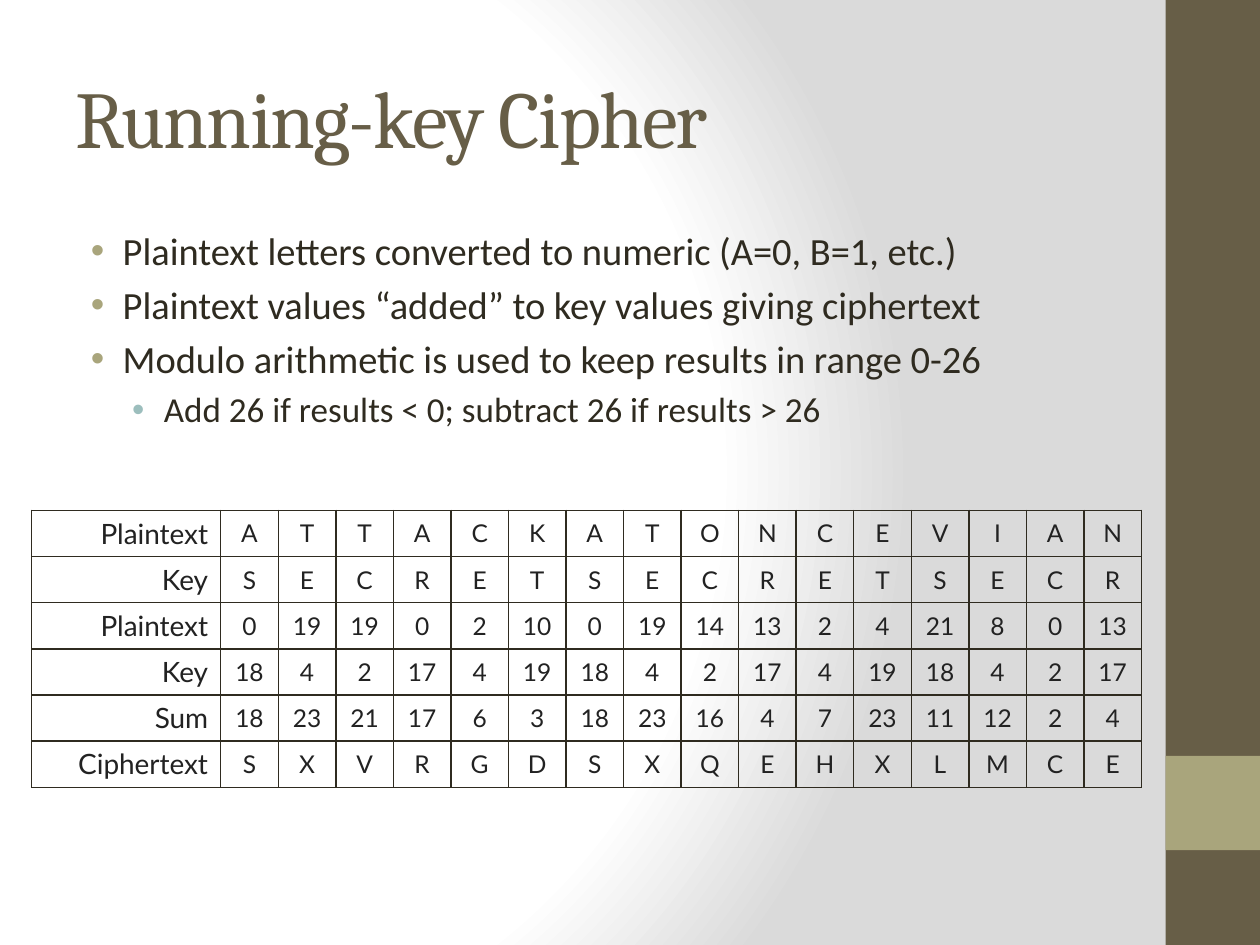
"""Build the Running-key Cipher slide with its worked encryption table."""
from lxml.etree import SubElement
from pptx import Presentation
from pptx.dml.color import RGBColor
from pptx.enum.shapes import MSO_SHAPE
from pptx.enum.text import MSO_ANCHOR, MSO_AUTO_SIZE, PP_ALIGN
from pptx.oxml import parse_xml
from pptx.oxml.ns import nsdecls, qn
from pptx.util import Cm, Pt

COLORS = {
    "brown": "675E47", "olive": "A9A57C", "teal": "9CBEBD", "ink": "2F2B20",
    "cell": "222222", "white": "FFFFFF", "gray": "DADADA",
}


def format_font(font, color, **values):
    font.color.rgb = RGBColor.from_string(COLORS[color])
    for name, value in values.items():
        setattr(font, name, value)


def set_indent(paragraph, left, hanging):
    properties = paragraph._p.get_or_add_pPr()
    properties.set("marL", str(Cm(left)))
    properties.set("indent", str(-Cm(hanging)))
    return properties


presentation = Presentation()
presentation.slide_width, presentation.slide_height = Cm(25.4), Cm(19.05)
slide = presentation.slides.add_slide(presentation.slide_layouts[1])

slide._element.cSld.insert(0, parse_xml(
    f'<p:bg {nsdecls("p", "a")}><p:bgPr><a:gradFill rotWithShape="1"><a:gsLst>'
    f'<a:gs pos="0"><a:srgbClr val="{COLORS["white"]}"/></a:gs>'
    f'<a:gs pos="75000"><a:srgbClr val="{COLORS["white"]}"/></a:gs>'
    f'<a:gs pos="100000"><a:srgbClr val="{COLORS["gray"]}"/></a:gs></a:gsLst>'
    '<a:path path="circle"><a:fillToRect l="20000" t="50000" r="100000" b="50000"/></a:path>'
    '</a:gradFill><a:effectLst/></p:bgPr></p:bg>'))

for color, top, height in (("brown", 0, 19.05), ("olive", 15.24, 1.9)):
    band = slide.shapes.add_shape(MSO_SHAPE.RECTANGLE, Cm(23.5), Cm(top), Cm(1.9), Cm(height))
    band.shadow.inherit = False
    band.fill.solid()
    band.fill.fore_color.rgb = RGBColor.from_string(COLORS[color])
    band.line.fill.background()

title, body = slide.shapes.title, slide.placeholders[1]
for placeholder, top, height, anchor in (
    (title, 0.76, 3.18, MSO_ANCHOR.MIDDLE),
    (body, 4.45, 4.88, MSO_ANCHOR.TOP),
):
    placeholder.left, placeholder.top = Cm(1.27), Cm(top)
    placeholder.width, placeholder.height = Cm(21.16), Cm(height)
    placeholder.text_frame.auto_size = MSO_AUTO_SIZE.NONE
    placeholder.text_frame.vertical_anchor = anchor

title.text_frame.text = "Running-key Cipher"
heading = title.text_frame.paragraphs[0]
heading.alignment = PP_ALIGN.LEFT
format_font(heading.runs[0].font, "brown", name="Cambria", size=Pt(46))
heading.runs[0].font._element.set("spc", "-100")

bullets = [
    ("Plaintext letters converted to numeric (A=0, B=1, etc.)", 0),
    ("Plaintext values “added” to key values giving ciphertext", 0),
    ("Modulo arithmetic is used to keep results in range 0-26", 0),
    ("Add 26 if results < 0; subtract 26 if results > 26", 1),
]
levels = [
    {"left": 0.95, "size": Pt(22), "bullet": "olive"},
    {"left": 1.78, "size": Pt(20), "bullet": "teal"},
]
body.text_frame.text = "\n".join(text for text, level in bullets)
for paragraph, (text, level) in zip(body.text_frame.paragraphs, bullets):
    style = levels[level]
    paragraph.level = level
    properties = set_indent(paragraph, style["left"], 0.64)
    bullet_color = SubElement(properties, qn("a:buClr"))
    SubElement(bullet_color, qn("a:srgbClr"), val=COLORS[style["bullet"]])
    SubElement(properties, qn("a:buFont"), typeface="Arial")
    SubElement(properties, qn("a:buChar"), char="•")
    format_font(paragraph.runs[0].font, "ink", name="Calibri", size=style["size"])

cipher_rows = [
    "Plaintext A T T A C K A T O N C E V I A N",
    "Key S E C R E T S E C R E T S E C R",
    "Plaintext 0 19 19 0 2 10 0 19 14 13 2 4 21 8 0 13",
    "Key 18 4 2 17 4 19 18 4 2 17 4 19 18 4 2 17",
    "Sum 18 23 21 17 6 3 18 23 16 4 7 23 11 12 2 4",
    "Ciphertext S X V R G D S X Q E H X L M C E",
]
label_width, letter_width, row_height, letters = 3.81, 1.16, 0.93, 16
table = slide.shapes.add_table(
    len(cipher_rows), letters + 1, Cm(0.64), Cm(10.29),
    Cm(label_width + letters * letter_width), Cm(row_height * len(cipher_rows))).table
table.first_row = table.horz_banding = False
for index, column in enumerate(table.columns):
    column.width = Cm(letter_width if index else label_width)

for row, values in zip(table.rows, cipher_rows):
    row.height = Cm(row_height)
    for index, (cell, value) in enumerate(zip(row.cells, values.split())):
        cell.text = value
        cell.vertical_anchor = MSO_ANCHOR.MIDDLE
        paragraph = cell.text_frame.paragraphs[0]
        paragraph.alignment = PP_ALIGN.CENTER if index else PP_ALIGN.RIGHT
        set_indent(paragraph, 0.95, 0.95)
        format_font(paragraph.runs[0].font, "cell", name="Lato", size=Pt(14 if index else 16))
        for side in ("L", "R", "T", "B"):
            border = SubElement(cell._tc.get_or_add_tcPr(), qn(f"a:ln{side}"), w=str(Pt(1)))
            SubElement(SubElement(border, qn("a:solidFill")), qn("a:srgbClr"), val=COLORS["ink"])
        cell.fill.background()

presentation.save("out.pptx")
